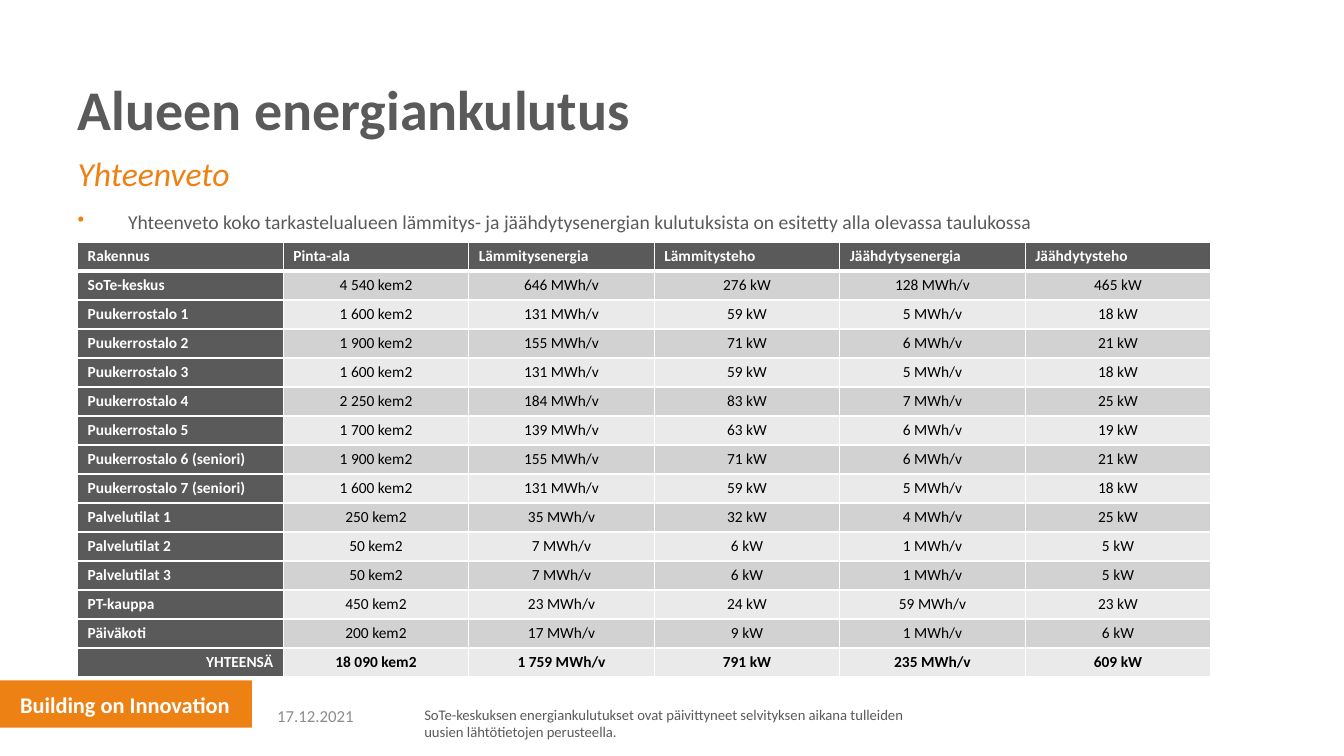
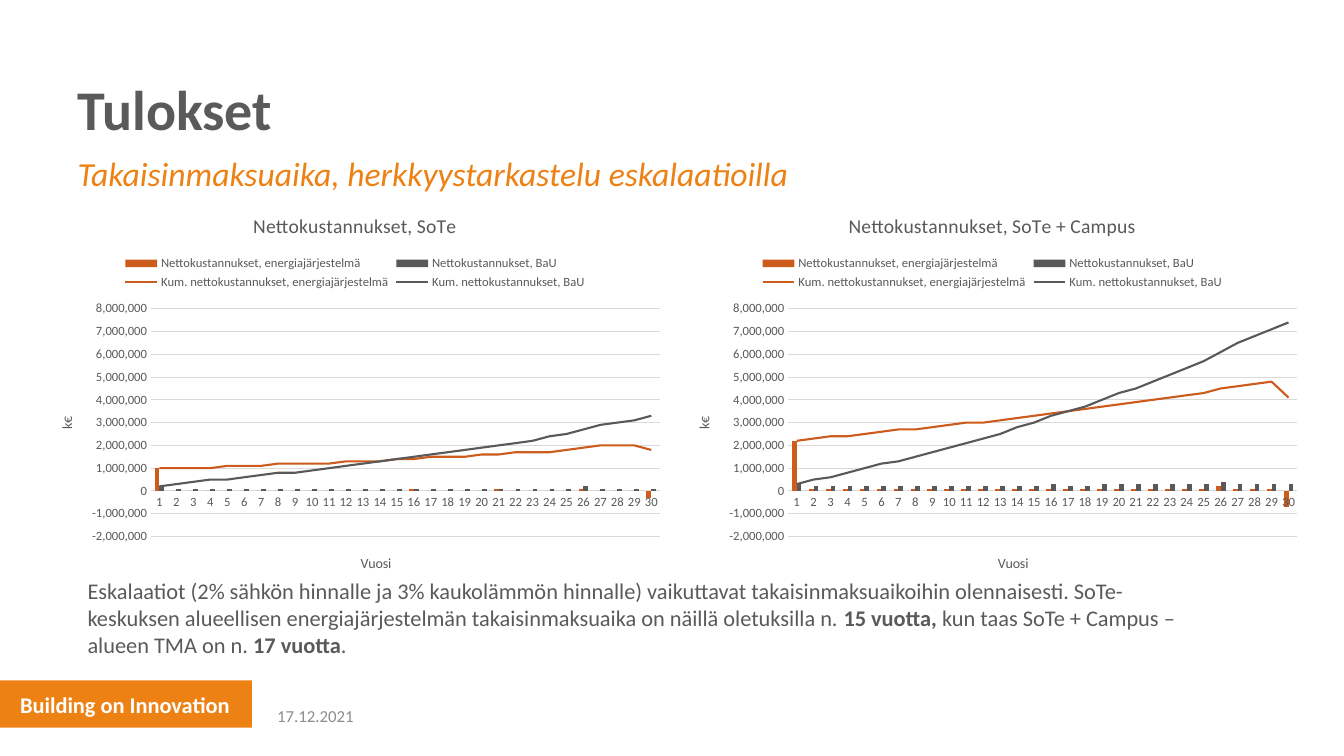
"""Build two slides on the energy use of an area and the payback of its energy system."""
from lxml import etree
from pptx import Presentation
from pptx.chart import data
from pptx.dml.color import RGBColor
from pptx.enum import chart as charts, shapes, text
from pptx.oxml import ns, parse_xml
from pptx.util import Inches, Pt

FONT = "Calibri"
ORANGE = RGBColor(0xED, 0x81, 0x13)
GREY = RGBColor(0x5A, 0x5A, 0x5A)
DATE_GREY = RGBColor(0x8C, 0x8C, 0x8C)
WHITE = RGBColor(0xFF, 0xFF, 0xFF)
BLACK = RGBColor(0, 0, 0)
BAND_DARK = RGBColor(0xD2, 0xD2, 0xD2)
BAND_LIGHT = RGBColor(0xEA, 0xEA, 0xEA)
CHART_RUST = RGBColor(0xCD, 0x5B, 0x1C)
CHART_GREY = RGBColor(0x59, 0x59, 0x59)
GRID_GREY = RGBColor(0xD9, 0xD9, 0xD9)
LEFT = 0.77
DATE = "17.12.2021"


def add_text(page, place, parts, size, color, inset=True):
    """Add a wrapped text box in which every second part is bold."""
    box = page.shapes.add_textbox(*map(Inches, place))
    frame = box.text_frame
    frame.word_wrap = True
    if not inset:
        frame.margin_left = frame.margin_top = frame.margin_right = frame.margin_bottom = 0
    para = frame.paragraphs[0]
    for index, part in enumerate(parts):
        span = para.add_run()
        span.text = part
        span.font.name = FONT
        span.font.size = Pt(size)
        span.font.color.rgb = color
        span.font.bold = index % 2 == 1
    return frame


def add_page(deck, heading, subheading):
    """Add a slide with its title, subtitle, brand band and date."""
    page = deck.slides.add_slide(deck.slide_layouts[5])
    band = page.shapes.add_shape(
        shapes.MSO_SHAPE.RECTANGLE, 0, Inches(6.75), Inches(2.5), Inches(0.47))
    band.shadow.inherit = False
    band.fill.solid()
    band.fill.fore_color.rgb = ORANGE
    band.line.fill.background()
    band.text_frame.text = "Building on Innovation"
    band.text_frame.margin_left = Inches(0.2)
    band.text_frame.margin_right = 0
    band.text_frame.vertical_anchor = text.MSO_ANCHOR.MIDDLE
    title = page.shapes.title
    title.left, title.top, title.width, title.height = map(Inches, (LEFT, 0.59, 11.84, 0.82))
    frame = title.text_frame
    frame.text = heading
    frame.auto_size = text.MSO_AUTO_SIZE.NONE
    frame.margin_left = frame.margin_top = frame.margin_right = frame.margin_bottom = 0
    frame.vertical_anchor = text.MSO_ANCHOR.BOTTOM
    for shape, size, color in ((band, 16, WHITE), (title, 40, GREY)):
        para = shape.text_frame.paragraphs[0]
        para.alignment = text.PP_ALIGN.LEFT
        font = para.runs[0].font
        font.name, font.size, font.bold = FONT, Pt(size), True
        font.color.rgb = color
    subtitle = add_text(page, (LEFT, 1.52, 11.84, 0.56), [subheading], 24, ORANGE, False)
    subtitle.paragraphs[0].runs[0].font.italic = True
    date = add_text(page, (2.65, 6.95, 3, 0.31), [DATE], 12, DATE_GREY)
    date.vertical_anchor = text.MSO_ANCHOR.MIDDLE
    return page


deck = Presentation()
deck.slide_width = Inches(13.33)
deck.slide_height = Inches(7.5)

page = add_page(deck, "Alueen energiankulutus", "Yhteenveto")
intro = add_text(
    page, (LEFT, 2.08, 11.85, 0.31),
    ["Yhteenveto koko tarkastelualueen lämmitys- ja jäähdytysenergian kulutuksista "
     "on esitetty alla olevassa taulukossa"], 14, GREY, False)
bullet = intro.paragraphs[0]._p.get_or_add_pPr()
bullet.set("marL", str(Inches(0.5)))
bullet.set("indent", str(-Inches(0.5)))
bullet_color = etree.SubElement(bullet, ns.qn("a:buClr"))
etree.SubElement(bullet_color, ns.qn("a:srgbClr"), val=str(ORANGE))
etree.SubElement(bullet, ns.qn("a:buChar"), char="•")

HEADINGS = ["Rakennus", "Pinta-ala", "Lämmitysenergia", "Lämmitysteho",
            "Jäähdytysenergia", "Jäähdytysteho"]
UNITS = ["kem2", "MWh/v", "kW", "MWh/v", "kW"]
BUILDINGS = [
    ("SoTe-keskus", 4540, 646, 276, 128, 465),
    ("Puukerrostalo 1", 1600, 131, 59, 5, 18),
    ("Puukerrostalo 2", 1900, 155, 71, 6, 21),
    ("Puukerrostalo 3", 1600, 131, 59, 5, 18),
    ("Puukerrostalo 4", 2250, 184, 83, 7, 25),
    ("Puukerrostalo 5", 1700, 139, 63, 6, 19),
    ("Puukerrostalo 6 (seniori)", 1900, 155, 71, 6, 21),
    ("Puukerrostalo 7 (seniori)", 1600, 131, 59, 5, 18),
    ("Palvelutilat 1", 250, 35, 32, 4, 25),
    ("Palvelutilat 2", 50, 7, 6, 1, 5),
    ("Palvelutilat 3", 50, 7, 6, 1, 5),
    ("PT-kauppa", 450, 23, 24, 59, 23),
    ("Päiväkoti", 200, 17, 9, 1, 6),
    ("YHTEENSÄ", 18090, 1759, 791, 235, 609),
]
rows = [HEADINGS]
for name, *amounts in BUILDINGS:
    rows.append([name] + [f"{amount:,} {unit}".replace(",", " ")
                          for amount, unit in zip(amounts, UNITS)])
last = len(rows) - 1
table = page.shapes.add_table(len(rows), len(HEADINGS), Inches(LEFT), Inches(2.4),
                              Inches(11.25), Inches(4.32)).table
for index, column in enumerate(table.columns):
    column.width = Inches(1.84 if index else 2.04)
for r, row in enumerate(rows):
    for c, value in enumerate(row):
        cell = table.cell(r, c)
        cell.text = value
        is_label = r == 0 or c == 0
        cell.fill.solid()
        cell.fill.fore_color.rgb = GREY if is_label else BAND_DARK if r % 2 else BAND_LIGHT
        para = cell.text_frame.paragraphs[0]
        if not is_label:
            para.alignment = text.PP_ALIGN.CENTER
            cell.vertical_anchor = text.MSO_ANCHOR.MIDDLE
        elif r == last:
            para.alignment = text.PP_ALIGN.RIGHT
        font = para.runs[0].font
        font.name, font.size = FONT, Pt(11)
        font.bold = is_label or r == last
        font.color.rgb = WHITE if is_label else BLACK
        for position, side in enumerate(("lnL", "lnR", "lnT", "lnB")):
            thick = (r == 0 and side == "lnB") or (r == 1 and side == "lnT")
            cell._tc.get_or_add_tcPr().insert(position, parse_xml(
                f'<a:{side} {ns.nsdecls("a")} w="{Pt(3 if thick else 1)}"><a:solidFill>'
                f'<a:srgbClr val="{WHITE}"/></a:solidFill></a:{side}>'))

add_text(page, (4.11, 6.95, 5.11, 0.45),
         ["SoTe-keskuksen energiankulutukset ovat päivittyneet selvityksen aikana "
          "tulleiden uusien lähtötietojen perusteella."], 10.5, GREY)

page = add_page(deck, "Tulokset", "Takaisinmaksuaika, herkkyystarkastelu eskalaatioilla")
SERIES_NAMES = ["Nettokustannukset, energiajärjestelmä", "Nettokustannukset, BaU",
                "Kum. nettokustannukset, energiajärjestelmä", "Kum. nettokustannukset, BaU"]
STEP = 100000
COSTS = [
    ("Nettokustannukset, SoTe", 0.37, [
        [10] + [0] * 14 + [1] + [0] * 4 + [1] + [0] * 4 + [1] + [0] * 3 + [-3],
        [2] + [1] * 24 + [2] + [1] * 4,
        [10, 10, 10, 10, 11, 11, 11, 12, 12, 12, 12, 13, 13, 13, 14,
         14, 15, 15, 15, 16, 16, 17, 17, 17, 18, 19, 20, 20, 20, 18],
        [2, 3, 4, 5, 5, 6, 7, 8, 8, 9, 10, 11, 12, 13, 14,
         15, 16, 17, 18, 19, 20, 21, 22, 24, 25, 27, 29, 30, 31, 33]]),
    ("Nettokustannukset, SoTe + Campus", 6.69, [
        [22] + [1] * 24 + [2] + [1] * 3 + [-7],
        [3] + [2] * 14 + [3, 2, 2] + [3] * 7 + [4] + [3] * 4,
        [22, 23, 24, 24, 25, 26, 27, 27, 28, 29, 30, 30, 31, 32, 33,
         34, 35, 36, 37, 38, 39, 40, 41, 42, 43, 45, 46, 47, 48, 41],
        [3, 5, 6, 8, 10, 12, 13, 15, 17, 19, 21, 23, 25, 28, 30,
         33, 35, 37, 40, 43, 45, 48, 51, 54, 57, 61, 65, 68, 71, 74]]),
]
for heading, left, costs in COSTS:
    chart_data = data.CategoryChartData(number_format="#,##0")
    chart_data.categories = [str(year) for year in range(1, 31)]
    for name, steps in zip(SERIES_NAMES, costs):
        chart_data.add_series(name, [step * STEP for step in steps])
    chart = page.shapes.add_chart(
        charts.XL_CHART_TYPE.COLUMN_CLUSTERED, Inches(left), Inches(1.94),
        Inches(6.3), Inches(3.94), chart_data).chart
    chart.font.name, chart.font.size = FONT, Pt(9)
    chart.font.color.rgb = CHART_GREY
    chart.has_legend = True
    chart.legend.position = charts.XL_LEGEND_POSITION.TOP
    chart.legend.include_in_layout = False
    chart.legend.font.name, chart.legend.font.size = FONT, Pt(9)
    chart.legend.font.color.rgb = CHART_GREY
    chart.has_title = True

    years, money = chart.category_axis, chart.value_axis
    years.has_title = money.has_title = True
    for titled, words, size in ((chart.chart_title, heading, 14),
                                (years.axis_title, "Vuosi", 10),
                                (money.axis_title, "k€", 10)):
        titled.text_frame.text = words
        font = titled.text_frame.paragraphs[0].runs[0].font
        font.name, font.size, font.bold = FONT, Pt(size), False
        font.color.rgb = CHART_GREY
    for axis in (years, money):
        axis.major_tick_mark = axis.minor_tick_mark = charts.XL_TICK_MARK.NONE
        axis.tick_labels.font.name, axis.tick_labels.font.size = FONT, Pt(9)
        axis.tick_labels.font.color.rgb = CHART_GREY
    money.minimum_scale, money.maximum_scale = -20 * STEP, 80 * STEP
    money.major_unit = 10 * STEP
    money.tick_labels.number_format = "#,##0"
    money.tick_labels.number_format_is_linked = False
    money.format.line.fill.background()
    for line in (years.format.line, money.major_gridlines.format.line):
        line.color.rgb = GRID_GREY
        line.width = Pt(0.75)

    bars = chart.plots[0]
    bars.gap_width, bars.overlap = 150, 0
    bars.vary_by_categories = False
    bar_xml = bars._element
    line_xml = parse_xml(
        f'<c:lineChart {ns.nsdecls("c")}><c:grouping val="standard"/>'
        '<c:varyColors val="0"/><c:marker val="1"/></c:lineChart>')
    for series_xml in bar_xml.findall(ns.qn("c:ser"))[2:]:
        etree.strip_elements(series_xml, ns.qn("c:invertIfNegative"))
        line_xml.insert(len(line_xml) - 1, series_xml)
    for axis_id in bar_xml.findall(ns.qn("c:axId")):
        etree.SubElement(line_xml, ns.qn("c:axId"), val=axis_id.get("val"))
    bar_xml.addnext(line_xml)

    bar_plot, line_plot = chart.plots
    for series, color in zip(bar_plot.series, (CHART_RUST, CHART_GREY)):
        series.invert_if_negative = False
        series.format.fill.solid()
        series.format.fill.fore_color.rgb = color
    for series, color in zip(line_plot.series, (CHART_RUST, CHART_GREY)):
        series.smooth = False
        series.marker.style = charts.XL_MARKER_STYLE.NONE
        series.format.line.color.rgb = color
        series.format.line.width = Pt(1.5)

add_text(page, (LEFT, 5.68, 11.01, 0.91),
         ["Eskalaatiot (2% sähkön hinnalle ja 3% kaukolämmön hinnalle) vaikuttavat "
          "takaisinmaksuaikoihin olennaisesti. SoTe-keskuksen alueellisen "
          "energiajärjestelmän takaisinmaksuaika on näillä oletuksilla n. ",
          "15 vuotta, ", "kun taas SoTe + Campus –alueen TMA on n. ", "17 vuotta", "."],
         16, GREY)

deck.save("out.pptx")
